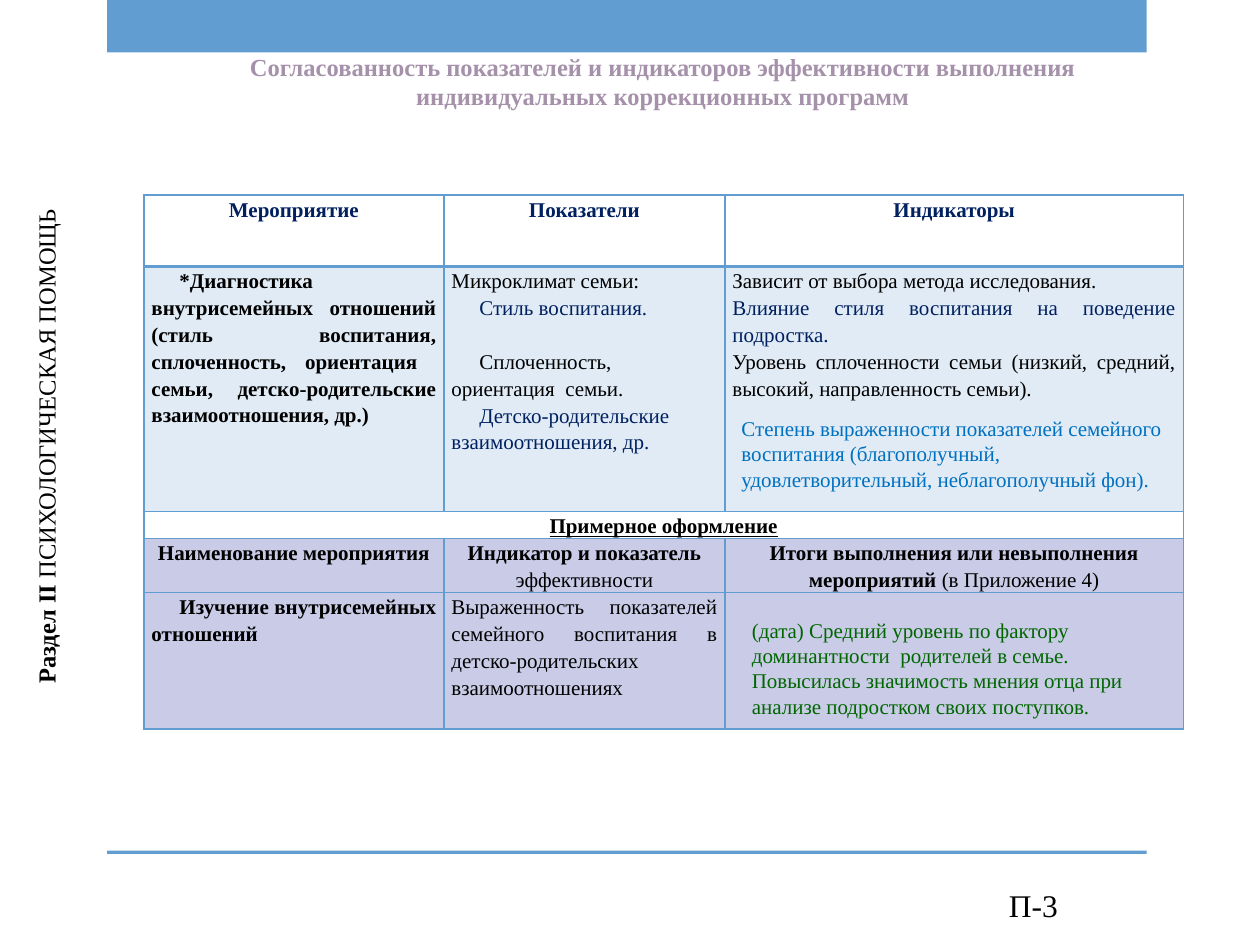
from lxml.etree import SubElement
from pptx import Presentation
from pptx.dml.color import RGBColor
from pptx.enum.shapes import MSO_SHAPE as Shape
from pptx.enum.text import PP_ALIGN as Align
from pptx.oxml.ns import qn
from pptx.util import Pt

FONT = "Times New Roman"
BLUE = RGBColor(0x62, 0x9D, 0xD1)
PALE_BLUE = RGBColor(0xE0, 0xEB, 0xF6)
LILAC = RGBColor(0xC9, 0xCB, 0xE7)
MAUVE = RGBColor(0xA6, 0x91, 0xAB)
NAVY = RGBColor(0x00, 0x20, 0x60)
SKY = RGBColor(0x00, 0x70, 0xC0)
GREEN = RGBColor(0x00, 0x66, 0x00)
BLACK = RGBColor(0, 0, 0)

COLUMN_WIDTHS = [171.4, 160.6, 262]
ROW_HEIGHTS = [41, 140, 15, 31, 78]
ROW_FILLS = [None, PALE_BLUE, None, LILAC, LILAC]


def entry(*runs, color=BLACK, align=Align.JUSTIFY, indent=0, before=0):
    """Describe one table paragraph; each run is a (text, bold) pair."""
    return runs, color, align, indent, before


def heading(*runs, color=BLACK):
    """Describe a centred table paragraph."""
    return entry(*runs, color=color, align=Align.CENTER)


ROWS = [
    [[heading((title, True), color=NAVY)]
     for title in ("Мероприятие", "Показатели", "Индикаторы")],
    [
        [entry(("*Диагностика внутрисемейных отношений (стиль воспитания, "
                "сплоченность, ориентация  семьи, детско-родительские "
                "взаимоотношения, др.)", True), indent=16)],
        [entry(("Микроклимат семьи:", False)),
         entry(("Стиль воспитания.", False), color=NAVY, indent=16),
         entry(("Сплоченность, ориентация  семьи.", False), indent=16, before=15.5),
         entry(("Детско-родительские взаимоотношения, др.", False),
               color=NAVY, indent=16)],
        [entry(("Зависит от выбора метода исследования.", False)),
         entry(("Влияние стиля воспитания на поведение подростка.", False),
               color=NAVY),
         entry(("Уровень сплоченности семьи (низкий, средний, высокий, "
                "направленность семьи).", False))],
    ],
    [[heading(("Примерное оформление", True))]],
    [
        [heading(("Наименование мероприятия", True))],
        [heading(("Индикатор и показатель ", True), ("эффективности", False))],
        [heading(("Итоги выполнения или невыполнения мероприятий ", True),
                 ("(в Приложение 4)", False))],
    ],
    [
        [entry(("Изучение внутрисемейных отношений", True), indent=16)],
        [entry(("Выраженность показателей семейного воспитания в "
                "детско-родительских взаимоотношениях", False))],
    ],
]


def add_runs(paragraph, runs, size, color):
    """Write runs, keeping shared formatting on the paragraph."""
    font = paragraph.font
    font.name, font.size, font.color.rgb = FONT, Pt(size), color
    for text, bold in runs:
        run = paragraph.add_run()
        run.text = text
        if len(runs) > 1:
            run.font.bold = bold
        else:
            font.bold = bold


def add_bar(slide, left, top, width, height):
    """Draw a plain blue bar."""
    bar = slide.shapes.add_shape(Shape.RECTANGLE, Pt(left), Pt(top), Pt(width), Pt(height))
    bar.shadow.inherit = False
    bar.fill.solid()
    bar.fill.fore_color.rgb = BLUE
    bar.line.fill.background()


def add_text(slide, box, lines, size, color, align=Align.LEFT, rotation=0):
    """Place a wrapped text box, one paragraph for each list of runs."""
    holder = slide.shapes.add_textbox(*map(Pt, box))
    holder.rotation = rotation
    frame = holder.text_frame
    frame.word_wrap = True
    for index, runs in enumerate(lines):
        paragraph = frame.add_paragraph() if index else frame.paragraphs[0]
        paragraph.alignment = align
        add_runs(paragraph, runs, size, color)


def set_borders(cell, widths):
    """Give the cell's left, right, top and bottom sides blue lines."""
    properties = cell._tc.get_or_add_tcPr()
    for side, width in zip("LRTB", widths):
        line = SubElement(properties, qn(f"a:ln{side}"), w=str(Pt(width)))
        fill = SubElement(line, qn("a:solidFill"))
        SubElement(fill, qn("a:srgbClr"), val=str(BLUE))


def fill_cell(cell, entries):
    """Write the described paragraphs into a cell."""
    cell.margin_left = cell.margin_right = Pt(4.3)
    cell.margin_top = cell.margin_bottom = 0
    frame = cell.text_frame
    for index, (runs, color, align, indent, before) in enumerate(entries):
        paragraph = frame.add_paragraph() if index else frame.paragraphs[0]
        paragraph.alignment = align
        paragraph.line_spacing = 1.15
        paragraph.space_before = Pt(before)
        paragraph._p.get_or_add_pPr().set("indent", str(Pt(indent)))
        add_runs(paragraph, runs, 12, color)


def add_indicator_table(slide, left, top):
    """Build the table of activities, measures and indicators."""
    table = slide.shapes.add_table(
        len(ROW_HEIGHTS), len(COLUMN_WIDTHS), Pt(left), Pt(top),
        Pt(sum(COLUMN_WIDTHS)), Pt(sum(ROW_HEIGHTS))).table
    table.first_row = table.horz_banding = False
    for column, width in zip(table.columns, COLUMN_WIDTHS):
        column.width = Pt(width)
    for row_index, (row, height) in enumerate(zip(table.rows, ROW_HEIGHTS)):
        row.height = Pt(height)
        top_width = 2 if row_index == 1 else 1
        bottom_width = 2 if row_index == 0 else 1
        for cell in row.cells:
            set_borders(cell, (1, 1, top_width, bottom_width))
            if ROW_FILLS[row_index] is None:
                cell.fill.background()
            else:
                cell.fill.solid()
                cell.fill.fore_color.rgb = ROW_FILLS[row_index]
        for cell, entries in zip(row.cells, ROWS[row_index]):
            fill_cell(cell, entries)
    table.cell(2, 0).merge(table.cell(2, 2))
    table.cell(2, 0).text_frame.paragraphs[0].font.underline = True


def build_slide(slide):
    """Lay out the whole slide."""
    add_bar(slide, 61.2, 0, 594, 30)
    add_bar(slide, 61.2, 486, 594, 2)
    add_indicator_table(slide, 82.3, 111.4)
    add_text(slide, (60, 26, 641, 41), [
        [("Согласованность показателей и индикаторов эффективности выполнения ", True)],
        [("индивидуальных коррекционных программ ", True)],
    ], 14, MAUVE, Align.CENTER)
    add_text(slide, (-122.4, 237, 297.4, 24.2), [
        [("Раздел II", True), (" ПСИХОЛОГИЧЕСКАЯ ПОМОЩЬ", False)],
    ], 14, BLACK, rotation=270)
    add_text(slide, (422.6, 349.4, 244, 80), [
        [("(дата) Средний уровень по фактору доминантности  родителей в семье. "
          "Повысилась значимость мнения отца при анализе подростком своих "
          "поступков.", False)],
    ], 12, GREEN)
    add_text(slide, (416.6, 234, 255, 65.5), [
        [("Степень выраженности показателей семейного воспитания "
          "(благополучный, удовлетворительный, неблагополучный фон).", False)],
    ], 12, SKY)
    add_text(slide, (569.5, 502.6, 45.4, 29), [[("П-3", False)]], 18, BLACK)


def main():
    """Create and save the presentation."""
    deck = Presentation()
    deck.slide_width, deck.slide_height = Pt(720), Pt(540)
    build_slide(deck.slides.add_slide(deck.slide_layouts[6]))
    deck.save("out.pptx")


if __name__ == "__main__":
    main()
